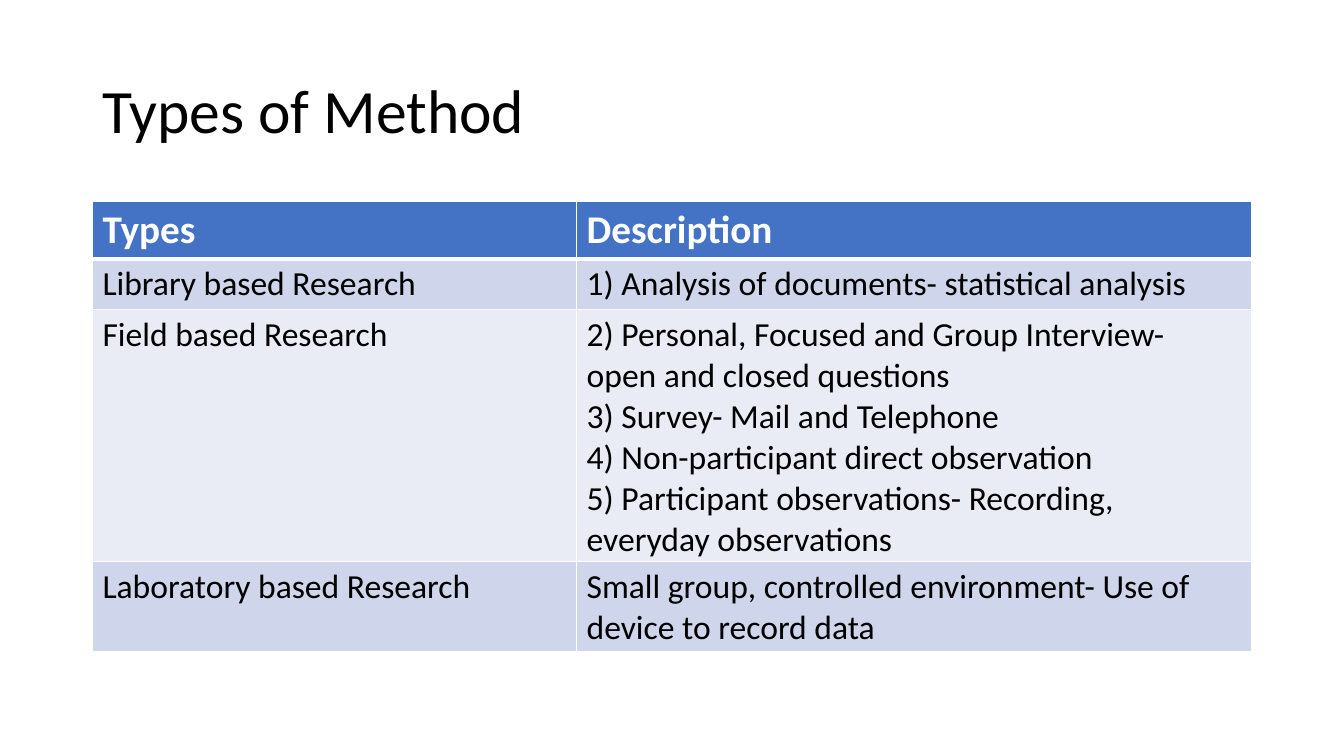
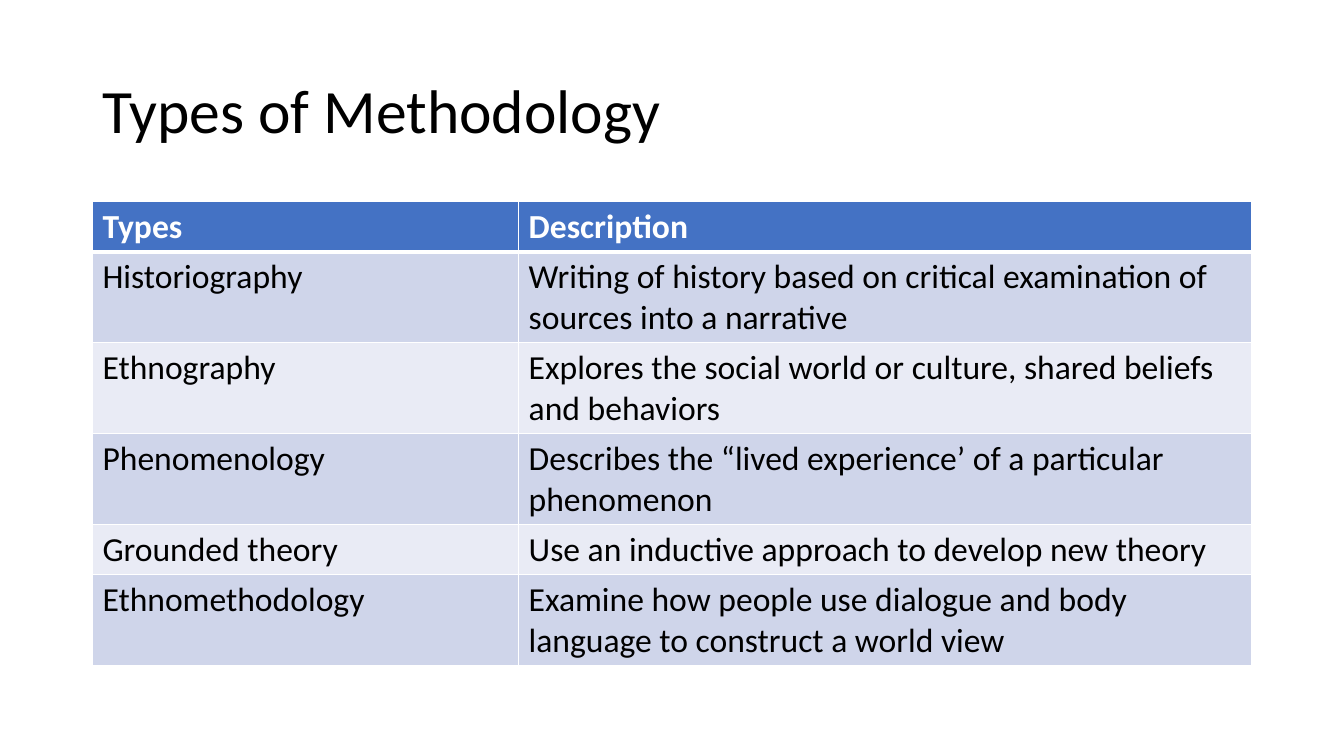
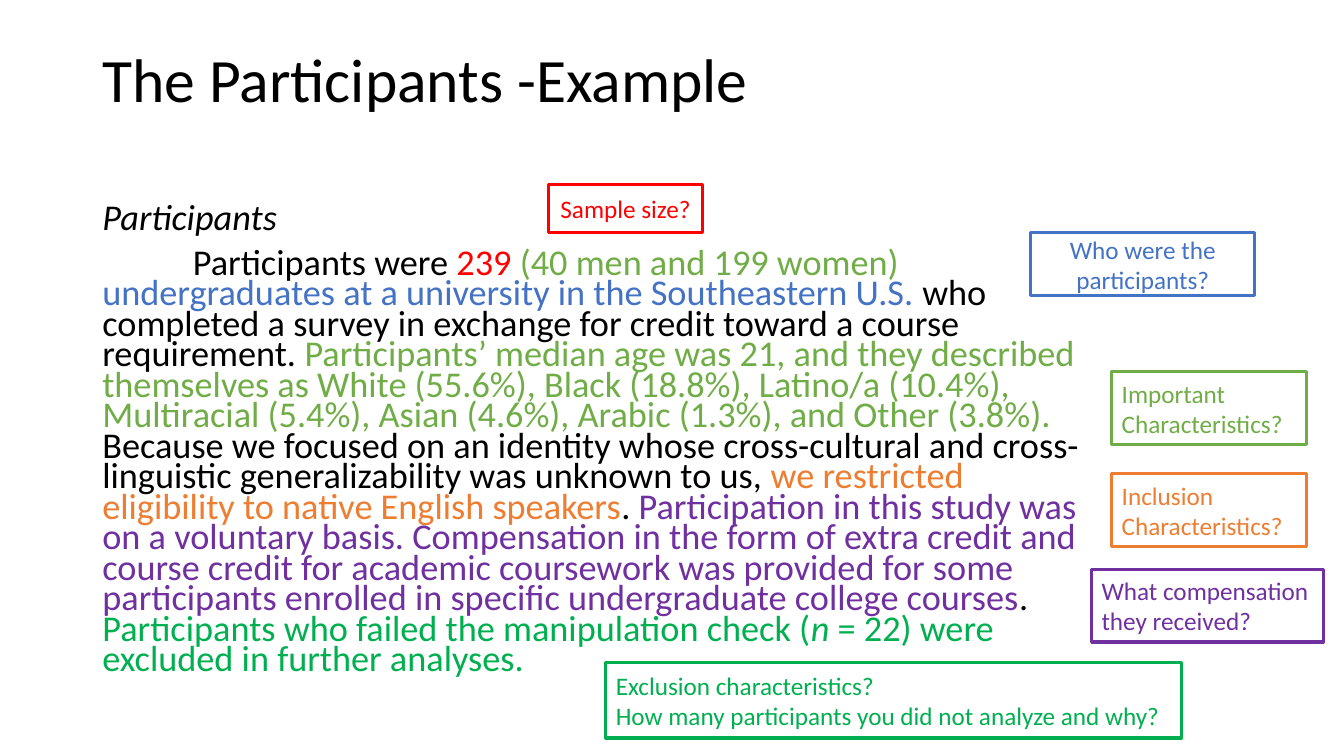
from dataclasses import dataclass
from typing import NamedTuple

from lxml import etree
from pptx import Presentation
from pptx import util as u
from pptx.dml import color
from pptx.enum import shapes, text
from pptx.oxml import ns

# Shared style
FONT = "Calibri"
BLACK, WHITE, RED = "000000", "FFFFFF", "FF0000"
BLUE, GREEN, ORANGE = "4472C4", "70AD47", "ED7D31"
PURPLE, EMERALD = "7030A0", "00B050"
BANDS = ("CFD5EA", "E9EBF5")
LEFT, CONTENT_TOP, CONTENT_WIDTH = 2.33, 5.08, 29.21
ROW_HEIGHT = 1.04
TABLE_SIZE = 24


class Box(NamedTuple):
    left: float
    top: float
    width: float
    height: float

    def lengths(self) -> list:
        return [u.Cm(value) for value in self]


class Run(NamedTuple):
    words: str
    colour: str = BLACK
    italic: bool = False


@dataclass
class TableSlide:
    title: str
    widths: tuple
    header_size: float
    rows: list


@dataclass
class Callout:
    box: Box
    colour: str
    lines: tuple
    centred: bool = False


# Helpers
def rgb(colour: str) -> color.RGBColor:
    return color.RGBColor.from_string(colour)


def add_run(paragraph, words: str, size: float, colour: str = BLACK,
            bold: bool = False, italic: bool = False) -> None:
    run = paragraph.add_run()
    run.text = words
    font = run.font
    font.name, font.size = FONT, u.Pt(size)
    font.bold, font.italic = bold, italic
    font.color.rgb = rgb(colour)


def add_lines(frame, lines: tuple, size: float, colour: str = BLACK,
              bold: bool = False, align=text.PP_ALIGN.LEFT) -> None:
    for index, line in enumerate(lines):
        paragraph = frame.add_paragraph() if index else frame.paragraphs[0]
        paragraph.alignment = align
        add_run(paragraph, line, size, colour, bold)


def add_text_frame(slide, box: Box):
    frame = slide.shapes.add_textbox(*box.lengths()).text_frame
    frame.word_wrap = True
    return frame


def add_titled_slide(presentation, title: str, top: float = 1.01):
    slide = presentation.slides.add_slide(presentation.slide_layouts[6])
    frame = add_text_frame(slide, Box(LEFT, top, CONTENT_WIDTH, 3.68))
    frame.vertical_anchor = text.MSO_ANCHOR.MIDDLE
    add_lines(frame, (title,), 44)
    frame.paragraphs[0].line_spacing = 0.9
    return slide


def set_borders(cell, top: float, bottom: float) -> None:
    properties = cell._tc.get_or_add_tcPr()
    for side, width in (("L", 1), ("R", 1), ("T", top), ("B", bottom)):
        line = etree.SubElement(properties, ns.qn(f"a:ln{side}"), w=str(u.Pt(width)))
        fill = etree.SubElement(line, ns.qn("a:solidFill"))
        etree.SubElement(fill, ns.qn("a:srgbClr"), val=WHITE)


def add_table_slide(presentation, content: TableSlide) -> None:
    slide = add_titled_slide(presentation, content.title)
    rows = [("Types", "Description"), *content.rows]
    box = Box(LEFT, CONTENT_TOP, sum(content.widths), ROW_HEIGHT * len(rows))
    table = slide.shapes.add_table(len(rows), 2, *box.lengths()).table
    for column, width in zip(table.columns, content.widths):
        column.width = u.Cm(width)
    for row_index, row in enumerate(rows):
        is_header = row_index == 0
        for column_index, words in enumerate(row):
            cell = table.cell(row_index, column_index)
            set_borders(cell, 3 if row_index == 1 else 1, 3 if is_header else 1)
            cell.fill.solid()
            cell.fill.fore_color.rgb = rgb(BLUE if is_header else BANDS[(row_index - 1) % 2])
            add_lines(cell.text_frame, words.split("\n"),
                      content.header_size if is_header else TABLE_SIZE,
                      WHITE if is_header else BLACK, is_header)


def add_callout(slide, callout: Callout) -> None:
    shape = slide.shapes.add_shape(shapes.MSO_SHAPE.RECTANGLE, *callout.box.lengths())
    shape.shadow.inherit = False
    shape.fill.background()
    shape.line.color.rgb = rgb(callout.colour)
    shape.line.width = u.Pt(2.25)
    frame = shape.text_frame
    frame.word_wrap = True
    frame.vertical_anchor = text.MSO_ANCHOR.MIDDLE
    align = text.PP_ALIGN.CENTER if callout.centred else text.PP_ALIGN.LEFT
    add_lines(frame, callout.lines, 18, callout.colour, align=align)


def add_participants_slide(presentation) -> None:
    slide = add_titled_slide(presentation, "The Participants -Example", top=0.25)
    frame = add_text_frame(slide, Box(LEFT, CONTENT_TOP, 25.37, 12.88))
    for index, runs in enumerate(PARTICIPANTS):
        paragraph = frame.add_paragraph() if index else frame.paragraphs[0]
        paragraph.line_spacing = 0.7
        paragraph.space_before = u.Pt(10)
        for run in runs:
            add_run(paragraph, run.words, 25.9, run.colour, italic=run.italic)
    # First-line indent of the example paragraph
    frame.paragraphs[1]._p.get_or_add_pPr().set("indent", str(u.Cm(2.28)))
    for callout in CALLOUTS:
        add_callout(slide, callout)


# Content
TABLE_SLIDES = [
    TableSlide("Types of Method", (12.2, 17.01), 28, [
        ("Library based Research", "1) Analysis of documents- statistical analysis"),
        ("Field based Research",
         "2) Personal, Focused and Group Interview- open and closed questions\n"
         "3) Survey- Mail and Telephone\n"
         "4) Non-participant direct observation\n"
         "5) Participant observations- Recording, everyday observations"),
        ("Laboratory based Research",
         "Small group, controlled environment- Use of device to record data"),
    ]),
    TableSlide("Types of Methodology", (10.74, 18.47), 24, [
        ("Historiography",
         "Writing of history based on critical examination of sources into a narrative"),
        ("Ethnography", "Explores the social world or culture, shared beliefs and behaviors"),
        ("Phenomenology", "Describes the “lived experience’ of a particular phenomenon"),
        ("Grounded theory", "Use an inductive approach to develop new theory"),
        ("Ethnomethodology",
         "Examine how people use dialogue and body language to construct a world view"),
    ]),
]

PARTICIPANTS = [
    [Run("Participants", italic=True)],
    [
        Run("Participants were "),
        Run("239 ", RED),
        Run("(40 men and 199 women) ", GREEN),
        Run("undergraduates at a university in the Southeastern U.S. ", BLUE),
        Run("who completed a survey in exchange for credit toward a course requirement. "),
        Run("Participants’ median age was 21, and they described themselves as White (55.6%), "
            "Black (18.8%), Latino/a (10.4%), Multiracial (5.4%), Asian (4.6%), "
            "Arabic (1.3%), and Other (3.8%). ", GREEN),
        Run("Because we focused on an identity whose cross-cultural and cross-linguistic "
            "generalizability was unknown to us, "),
        Run("we restricted eligibility to native English speakers", ORANGE),
        Run(". "),
        Run("Participation in this study was on a voluntary basis. Compensation in the form "
            "of extra credit and course credit for academic coursework was provided for some "
            "participants enrolled in specific undergraduate college courses", PURPLE),
        Run(". "),
        Run("Participants who failed the manipulation check (", EMERALD),
        Run("n ", EMERALD, italic=True),
        Run("= 22) were excluded in further analyses.", EMERALD),
    ],
]

CALLOUTS = [
    Callout(Box(13.82, 4.65, 3.89, 1.22), RED, ("Sample size?",), centred=True),
    Callout(Box(28.02, 9.37, 4.9, 1.83), GREEN, ("Important Characteristics?",)),
    Callout(Box(25.98, 5.87, 5.64, 1.57), BLUE, ("Who were the participants?",), centred=True),
    Callout(Box(15.27, 16.69, 14.5, 1.91), EMERALD,
            ("Exclusion characteristics?", "How many participants you did not analyze and why?")),
    Callout(Box(28.02, 11.94, 4.9, 1.83), ORANGE, ("Inclusion Characteristics?",)),
    Callout(Box(27.51, 14.35, 5.84, 1.83), PURPLE, ("What compensation they received?",)),
]


def main() -> None:
    presentation = Presentation()
    presentation.slide_width, presentation.slide_height = u.Cm(33.87), u.Cm(19.05)
    for content in TABLE_SLIDES:
        add_table_slide(presentation, content)
    add_participants_slide(presentation)
    presentation.save("out.pptx")


if __name__ == "__main__":
    main()
